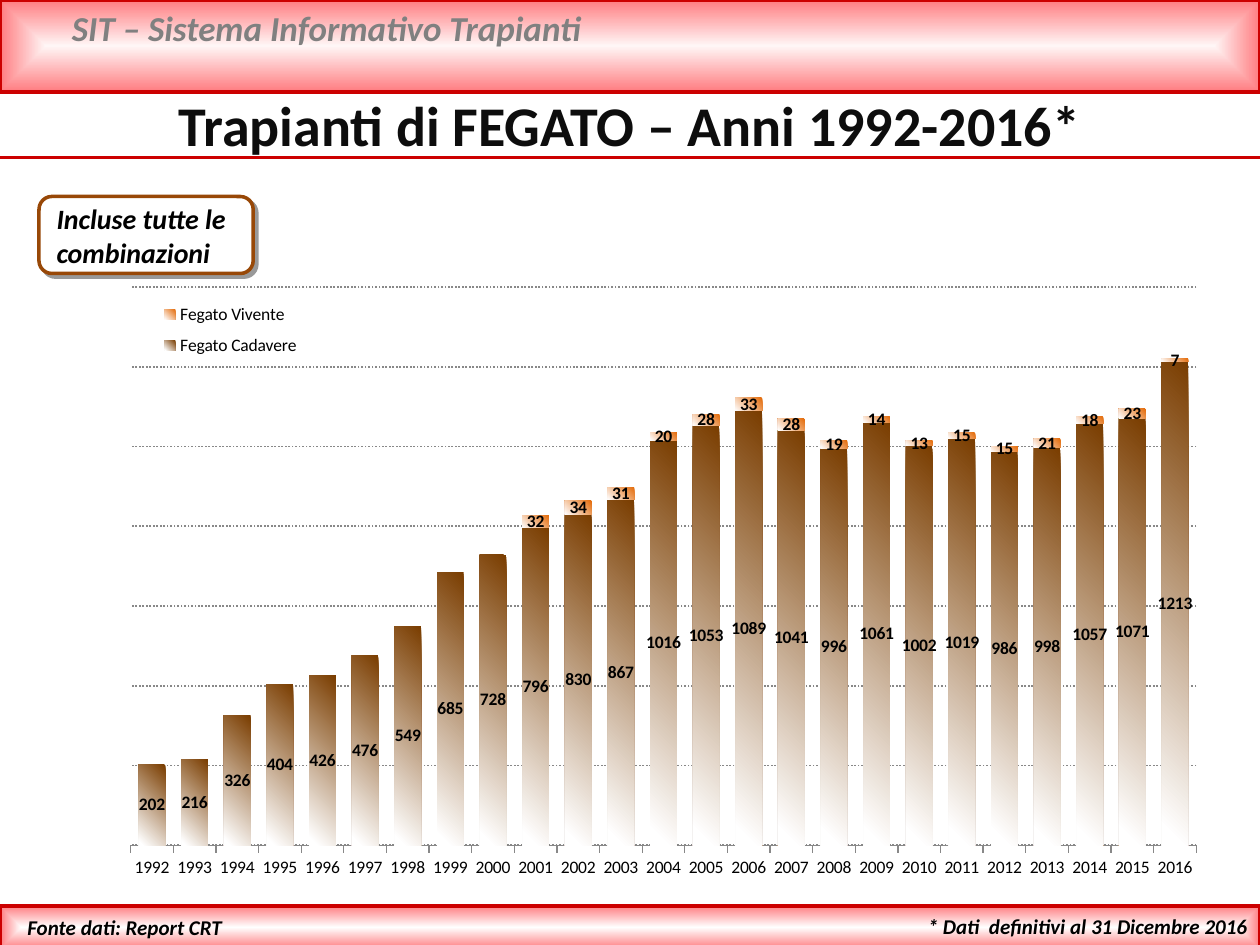
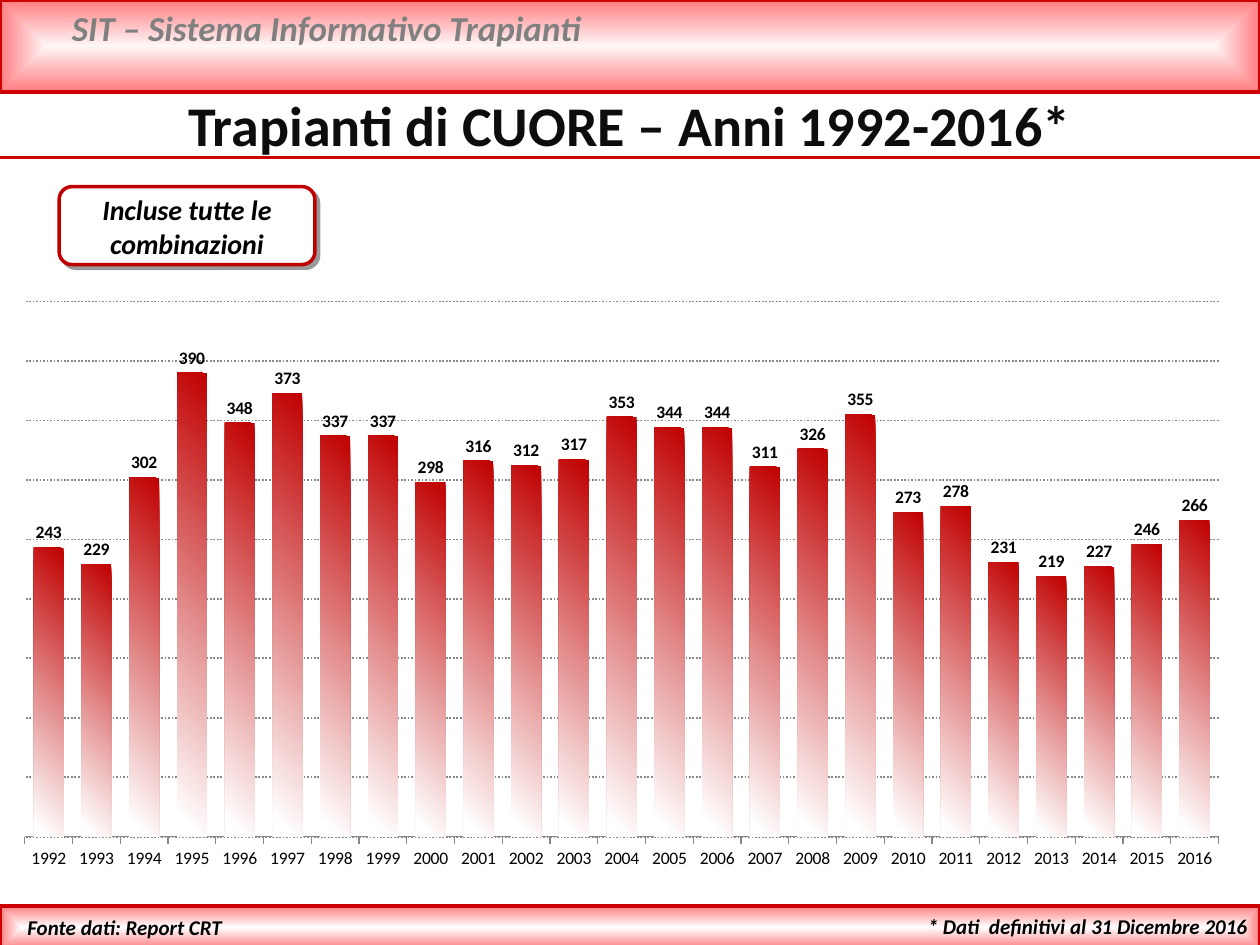
from lxml.etree import SubElement
from pptx import Presentation
from pptx.chart.data import CategoryChartData
from pptx.dml.color import RGBColor
from pptx.enum.chart import XL_CHART_TYPE as ChartType, XL_LABEL_POSITION as LabelPosition
from pptx.enum.chart import XL_LEGEND_POSITION as LegendPosition, XL_TICK_MARK as TickMark
from pptx.enum.dml import MSO_LINE as Dash
from pptx.enum.shapes import MSO_CONNECTOR as Connector, MSO_SHAPE as Shape
from pptx.enum.text import PP_ALIGN as Align
from pptx.oxml import parse_xml
from pptx.oxml.ns import nsdecls, qn
from pptx.util import Pt

color = RGBColor.from_string
FONT = "Calibri"
RED, PINK, GREY, BLACK, WHITE = "CC0000", "FF7C80", "888888", "000000", "FFFFFF"
YEARS = [str(year) for year in range(1992, 2017)]


def fill_gradient(fill, start, end, end_position=1.0):
    fill.gradient()
    fill.gradient_angle = 225
    first, last = fill.gradient_stops
    first.position, last.position = 0, end_position
    first.color.rgb, last.color.rgb = color(start), color(end)


def set_layout(element, index, target, **fractions):
    for old in element.findall(qn("c:layout")):
        element.remove(old)
    layout = parse_xml(f"<c:layout {nsdecls('c')}><c:manualLayout/></c:layout>")
    manual = layout[0]
    if target:
        SubElement(manual, qn("c:layoutTarget")).set("val", target)
    for side in ("x", "y"):
        SubElement(manual, qn(f"c:{side}Mode")).set("val", "edge")
    for name, fraction in fractions.items():
        SubElement(manual, qn(f"c:{name}")).set("val", str(fraction))
    element.insert(index, layout)


BANDS = [(0, 52.5, "FFF6F6"), (517.7, 24.5, WHITE)]
SHARED_TEXTS = [
    ("SIT – Sistema Informativo Trapianti", (34, 0, 646.5, 31.7), 20, "808080", True, Align.LEFT),
    ("* Dati  definitivi al 31 Dicembre 2016", (422.6, 518.4, 297.4, 21.6), 12, BLACK, True, Align.RIGHT),
    ("Fonte dati: Report CRT", (8.6, 519, 231, 21.6), 12, BLACK, True, Align.LEFT),
]
ORGANS = [
    {
        "title": "Trapianti di FEGATO – Anni 1992-2016*",
        "frame": (22.3, 112.3, 122.4, 44),
        "frame_color": "984807",
        "note": (25.2, 111.6, 118.8, 46),
        "note_align": Align.LEFT,
        "chart": (62, 157, 634.3, 350.6),
        "type": ChartType.COLUMN_STACKED,
        "overlap": 100,
        "labels": LabelPosition.CENTER,
        "axis": (1400, 200),
        "series": [
            ("Fegato Cadavere", "7A3D00", 0.96,
             [202, 216, 326, 404, 426, 476, 549, 685, 728, 796, 830, 867, 1016, 1053, 1089,
              1041, 996, 1061, 1002, 1019, 986, 998, 1057, 1071, 1213]),
            ("Fegato Vivente", "E46C0A", 1.0,
             [None] * 9 + [32, 34, 31, 20, 28, 33, 28, 19, 14, 13, 15, 15, 21, 18, 23, 7]),
        ],
    },
    {
        "title": "Trapianti di CUORE – Anni 1992-2016*",
        "frame": (33.8, 106.6, 146.2, 44.6),
        "frame_color": "C00000",
        "note": (33.8, 106.6, 146.2, 46),
        "note_align": Align.CENTER,
        "chart": (0, 165.6, 710.6, 336.2),
        "type": ChartType.COLUMN_CLUSTERED,
        "overlap": -20,
        "labels": LabelPosition.OUTSIDE_END,
        "axis": (450, 50),
        "series": [
            ("Cuore", "C00000", 0.96,
             [243, 229, 302, 390, 348, 373, 337, 337, 298, 316, 312, 317, 353, 344, 344,
              311, 326, 355, 273, 278, 231, 219, 227, 246, 266]),
        ],
    },
]

deck = Presentation()
deck.slide_width, deck.slide_height = Pt(720), Pt(540)

for organ in ORGANS:
    page = deck.slides.add_slide(deck.slide_layouts[6])

    for top, height, center in BANDS:
        band = page.shapes.add_shape(Shape.RECTANGLE, 0, Pt(top), Pt(720), Pt(height))
        band.shadow.inherit = False
        fill_gradient(band.fill, center, PINK)
        linear = band.element.spPr.find(".//" + qn("a:lin"))
        linear.getparent().replace(linear, parse_xml(
            f'<a:path {nsdecls("a")} path="shape">'
            '<a:fillToRect l="50000" t="50000" r="50000" b="50000"/></a:path>'))
        band.line.color.rgb = color(RED)
        band.line.width = Pt(2)

    rule = page.shapes.add_connector(Connector.STRAIGHT, 0, Pt(90), Pt(720), Pt(90))
    rule.line.color.rgb = color(RED)
    rule.line.width = Pt(2)
    SubElement(rule.element.spPr, qn("a:effectLst"))

    frame = page.shapes.add_shape(Shape.ROUNDED_RECTANGLE, *map(Pt, organ["frame"]))
    frame.fill.solid()
    frame.fill.fore_color.rgb = color(WHITE)
    frame.line.color.rgb = color(organ["frame_color"])
    frame.line.width = Pt(2)
    frame.shadow.inherit = False
    frame.element.spPr.find(qn("a:effectLst")).append(parse_xml(
        f'<a:outerShdw {nsdecls("a")} dist="38100" dir="2700000" algn="tl" rotWithShape="0">'
        f'<a:srgbClr val="{BLACK}"><a:alpha val="40000"/></a:srgbClr></a:outerShdw>'))

    texts = SHARED_TEXTS + [
        (organ["title"], (0, 48.2, 720, 46), 32, "0D0D0D", False, Align.CENTER),
        ("Incluse tutte le combinazioni", organ["note"], 16, BLACK, True, organ["note_align"]),
    ]
    for text, place, size, ink, italic, align in texts:
        box = page.shapes.add_textbox(*map(Pt, place))
        box.text_frame.word_wrap = True
        box.text_frame.text = text
        para = box.text_frame.paragraphs[0]
        para.alignment = align
        span = para.runs[0]
        span.font.name, span.font.size = FONT, Pt(size)
        span.font.bold, span.font.italic = True, italic
        span.font.color.rgb = color(ink)

    data = CategoryChartData()
    data.categories = YEARS
    for name, _, _, values in organ["series"]:
        data.add_series(name, values)
    chart = page.shapes.add_chart(organ["type"], *map(Pt, organ["chart"]), data).chart
    chart.has_title = False
    chart.font.name, chart.font.size = FONT, Pt(10)
    chart.font.color.rgb = color(BLACK)
    set_layout(chart.element.chart.plotArea, 0, "inner", x=0.02, y=0.02, w=0.96, h=0.91)

    chart.has_legend = len(organ["series"]) > 1
    if chart.has_legend:
        chart.legend.position = LegendPosition.LEFT
        chart.legend.include_in_layout = True
        set_layout(chart.element.chart.find(qn("c:legend")), 1, None, x=0.04, y=0.03, w=0.14, h=0.12)

    years_axis, value_axis = chart.category_axis, chart.value_axis
    years_axis.major_tick_mark = TickMark.OUTSIDE
    years_axis.format.line.color.rgb = color(GREY)
    value_axis.visible = False
    value_axis.minimum_scale = 0
    value_axis.maximum_scale, value_axis.major_unit = organ["axis"]
    grid = value_axis.major_gridlines.format.line
    grid.color.rgb = color(GREY)
    grid.width = Pt(1)
    grid.dash_style = Dash.ROUND_DOT

    plot = chart.plots[0]
    plot.vary_by_categories = False
    plot.gap_width, plot.overlap = 60, organ["overlap"]
    for series, (_, tint, fade, _) in zip(plot.series, organ["series"]):
        fill_gradient(series.format.fill, tint, WHITE, fade)
        labels = series.data_labels
        labels.show_value = True
        labels.position = organ["labels"]
        labels.font.bold = True
        labels.font.name, labels.font.size = FONT, Pt(10)
        labels.font.color.rgb = color(BLACK)

deck.save("out.pptx")
